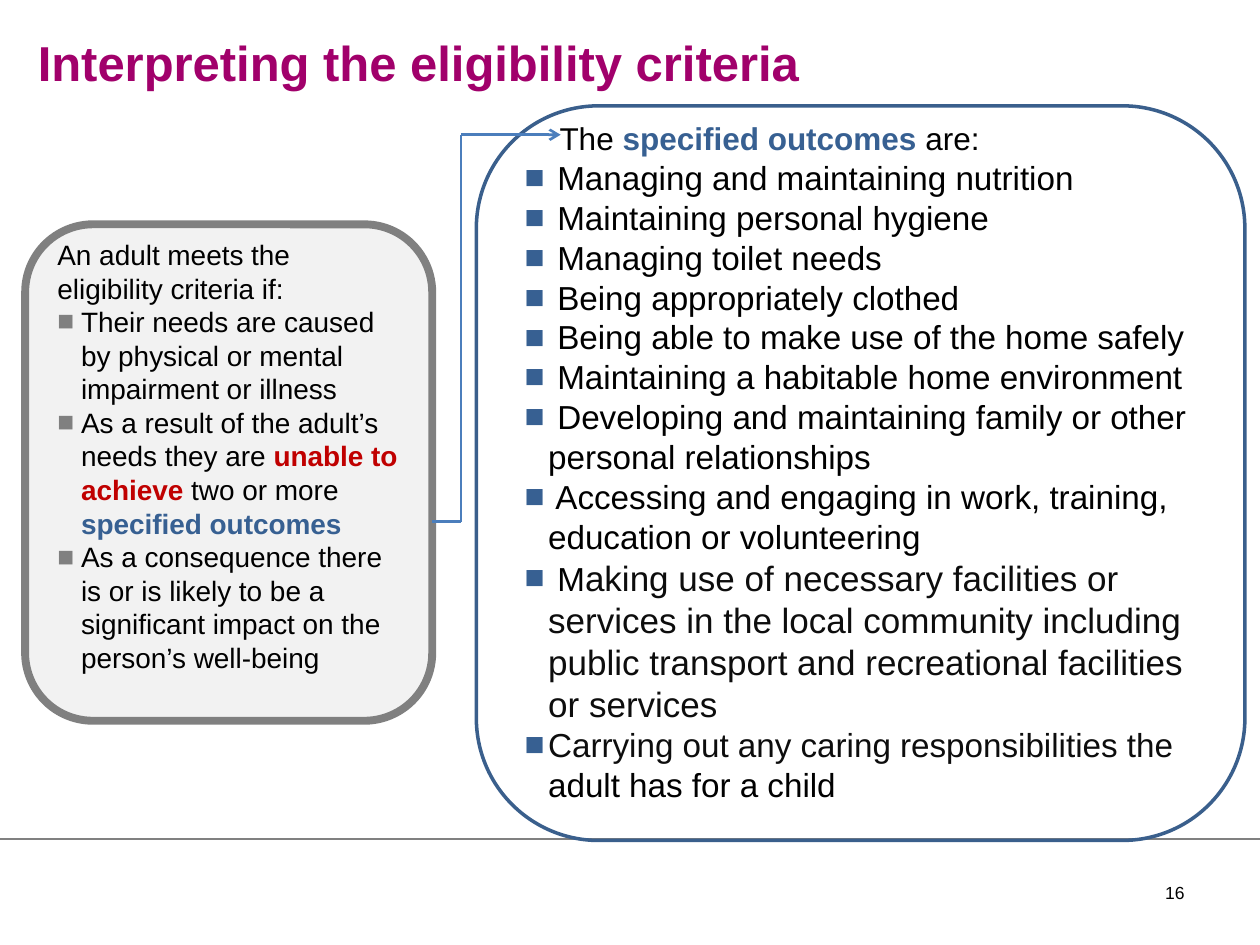
"""Build the slide on interpreting the eligibility criteria."""
from dataclasses import dataclass
from typing import Optional

from lxml import etree
from pptx import Presentation
from pptx.dml.color import RGBColor
from pptx.enum.shapes import MSO_CONNECTOR, MSO_SHAPE
from pptx.enum.text import MSO_ANCHOR, MSO_AUTO_SIZE, PP_ALIGN
from pptx.oxml.ns import qn
from pptx.util import Pt

STRAIGHT = MSO_CONNECTOR.STRAIGHT
ROUNDED = MSO_SHAPE.ROUNDED_RECTANGLE
TOP, MIDDLE = MSO_ANCHOR.TOP, MSO_ANCHOR.MIDDLE
NO_FIT = MSO_AUTO_SIZE.NONE
LEFT, RIGHT = PP_ALIGN.LEFT, PP_ALIGN.RIGHT


@dataclass(frozen=True)
class Theme:
    """Colours, font and type sizes of the slide."""
    font: str = "Arial"
    title: str = "A1006B"
    text: str = "000000"
    soft_text: str = "0D0D0D"
    alert: str = "C00000"
    outcome: str = "376092"
    grey: str = "808080"
    panel: str = "F2F2F2"
    outline: str = "3A5F8C"
    arrow: str = "4B7EBC"
    title_size: float = 28
    criteria_size: float = 16
    heading_size: float = 18
    outcome_size: float = 19
    large_size: float = 20
    number_size: float = 10
    leading: float = 1.2


THEME = Theme()


@dataclass(frozen=True)
class Span:
    """A run of text with one look."""
    text: str
    size: float
    color: str = THEME.text
    bold: bool = False


@dataclass(frozen=True)
class Line:
    """A paragraph, bulleted when it has a bullet colour."""
    spans: tuple[Span, ...]
    bullet: Optional[str] = None
    first_indent: float = 0
    align: PP_ALIGN = LEFT


@dataclass(frozen=True)
class Panel:
    """A rounded box with its text."""
    left: float
    top: float
    width: float
    height: float
    fill: Optional[str]
    outline: str
    outline_width: float
    bottom_inset: float
    lines: tuple[Line, ...]


def criterion(*spans: Span) -> Line:
    """Return a bulleted criterion."""
    return Line(spans, THEME.grey)


def outcome(*spans: Span) -> Line:
    """Return a bulleted outcome."""
    return Line(spans, THEME.outcome)


def criteria_span(text: str, color: str = THEME.text, bold: bool = False) -> Span:
    """Return a run in the criteria size."""
    return Span(text, THEME.criteria_size, color, bold)


SIMPLE_OUTCOMES = (
    "Managing and maintaining nutrition",
    "Maintaining personal hygiene",
    "Managing toilet needs",
    "Being appropriately clothed",
    "Being able to make use of the home safely",
    "Maintaining a habitable home environment",
    "Developing and maintaining family or other personal relationships",
    "Accessing and engaging in work, training, education or volunteering",
)

CRITERIA = Panel(14.4, 128.2, 232.6, 283.7, THEME.panel, THEME.grey, 4.5, 19.2, (
    Line((criteria_span("An adult meets the eligibility criteria if:"),)),
    criterion(criteria_span("Their needs are caused by physical or mental impairment or illness")),
    criterion(
        criteria_span("As a result of the adult’s needs they are "),
        criteria_span("unable to achieve ", THEME.alert, True),
        criteria_span("two or more "),
        criteria_span("specified outcomes", THEME.outcome, True)),
    criterion(criteria_span("As a consequence there is or is likely to be a significant "
                            "impact on the person’s well-being")),
))

OUTCOMES = Panel(272.2, 60.5, 439.2, 419.8, None, THEME.outline, 2, 13.2, (
    Line((
        Span("The ", THEME.heading_size),
        Span("specified outcomes", THEME.heading_size, THEME.outcome, True),
        Span(" are:", THEME.heading_size)), first_indent=20),
    *(outcome(Span(f" {text}", THEME.outcome_size)) for text in SIMPLE_OUTCOMES),
    outcome(
        Span(" M", THEME.outcome_size),
        Span("aking use of necessary facilities or services in the local community "
             "including public transport and recreational facilities or services",
             THEME.large_size, THEME.soft_text)),
    outcome(
        Span("Carrying out any caring responsibilities the ",
             THEME.outcome_size, THEME.soft_text),
        Span("adult has for a child", THEME.outcome_size)),
))


def rgb(color: str) -> RGBColor:
    """Return a colour from its hex digits."""
    return RGBColor.from_string(color)


def format_paragraph(paragraph, line: Line) -> None:
    """Set indents, bullet, alignment and leading."""
    properties = paragraph._p.get_or_add_pPr()
    margin = 13.5 if line.bullet else 0
    properties.set("marL", str(Pt(margin)))
    properties.set("indent", str(Pt(line.first_indent - margin)))
    if line.bullet:
        color = etree.SubElement(properties, qn("a:buClr"))
        etree.SubElement(color, qn("a:srgbClr"), val=line.bullet)
        etree.SubElement(properties, qn("a:buFont"), typeface=THEME.font)
        etree.SubElement(properties, qn("a:buChar"), char="■")
    paragraph.alignment = line.align
    paragraph.line_spacing = Pt(max(span.size for span in line.spans) * THEME.leading)


def write(frame, lines: tuple[Line, ...], anchor: MSO_ANCHOR) -> None:
    """Fill a text frame run by run."""
    frame.word_wrap = True
    frame.auto_size = NO_FIT
    frame.vertical_anchor = anchor
    for index, line in enumerate(lines):
        paragraph = frame.add_paragraph() if index else frame.paragraphs[0]
        format_paragraph(paragraph, line)
        for span in line.spans:
            run = paragraph.add_run()
            run.text = span.text
            run.font.name = THEME.font
            run.font.size = Pt(span.size)
            run.font.bold = span.bold
            run.font.color.rgb = rgb(span.color)


def draw_panel(slide, panel: Panel) -> None:
    """Draw a rounded box with its text."""
    shape = slide.shapes.add_shape(ROUNDED, Pt(panel.left), Pt(panel.top),
                                   Pt(panel.width), Pt(panel.height))
    shape.shadow.inherit = False
    if panel.fill:
        shape.fill.solid()
        shape.fill.fore_color.rgb = rgb(panel.fill)
    else:
        shape.fill.background()
    shape.line.color.rgb = rgb(panel.outline)
    shape.line.width = Pt(panel.outline_width)
    shape.text_frame.margin_top = Pt(0)
    shape.text_frame.margin_bottom = Pt(panel.bottom_inset)
    write(shape.text_frame, panel.lines, MIDDLE)


def draw_line(slide, start: tuple[float, float], end: tuple[float, float],
              color: str, width: float, arrow: bool = False) -> None:
    """Draw a straight line, with an arrowhead at its end if asked."""
    connector = slide.shapes.add_connector(STRAIGHT, *map(Pt, start), *map(Pt, end))
    connector.line.color.rgb = rgb(color)
    connector.line.width = Pt(width)
    if arrow:
        etree.SubElement(connector.line._get_or_add_ln(), qn("a:tailEnd"), type="arrow")
    etree.SubElement(connector._element.spPr, qn("a:effectLst"))


def main() -> None:
    """Build and save the slide."""
    presentation = Presentation()
    presentation.slide_width, presentation.slide_height = Pt(720), Pt(540)
    slide = presentation.slides.add_slide(presentation.slide_layouts[5])
    draw_line(slide, (720, 479.5), (0, 479.5), THEME.grey, 0.75)
    number = slide.shapes.add_textbox(Pt(516.2), Pt(500.4), Pt(167.8), Pt(28.8))
    write(number.text_frame, (Line((Span("16", THEME.number_size),), align=RIGHT),), TOP)
    title = slide.shapes.title
    title.left, title.top, title.width, title.height = map(Pt, (14.4, 15.1, 499, 79.2))
    write(title.text_frame, (Line((Span("Interpreting the eligibility criteria",
                                        THEME.title_size, THEME.title, True),)),), TOP)
    for panel in (CRITERIA, OUTCOMES):
        draw_panel(slide, panel)
    route = ((247, 298.1), (263.5, 298.1), (263.5, 77), (320.4, 77))
    for start, end in zip(route, route[1:]):
        draw_line(slide, start, end, THEME.arrow, 1.5, arrow=end == route[-1])
    presentation.save("out.pptx")


if __name__ == "__main__":
    main()
